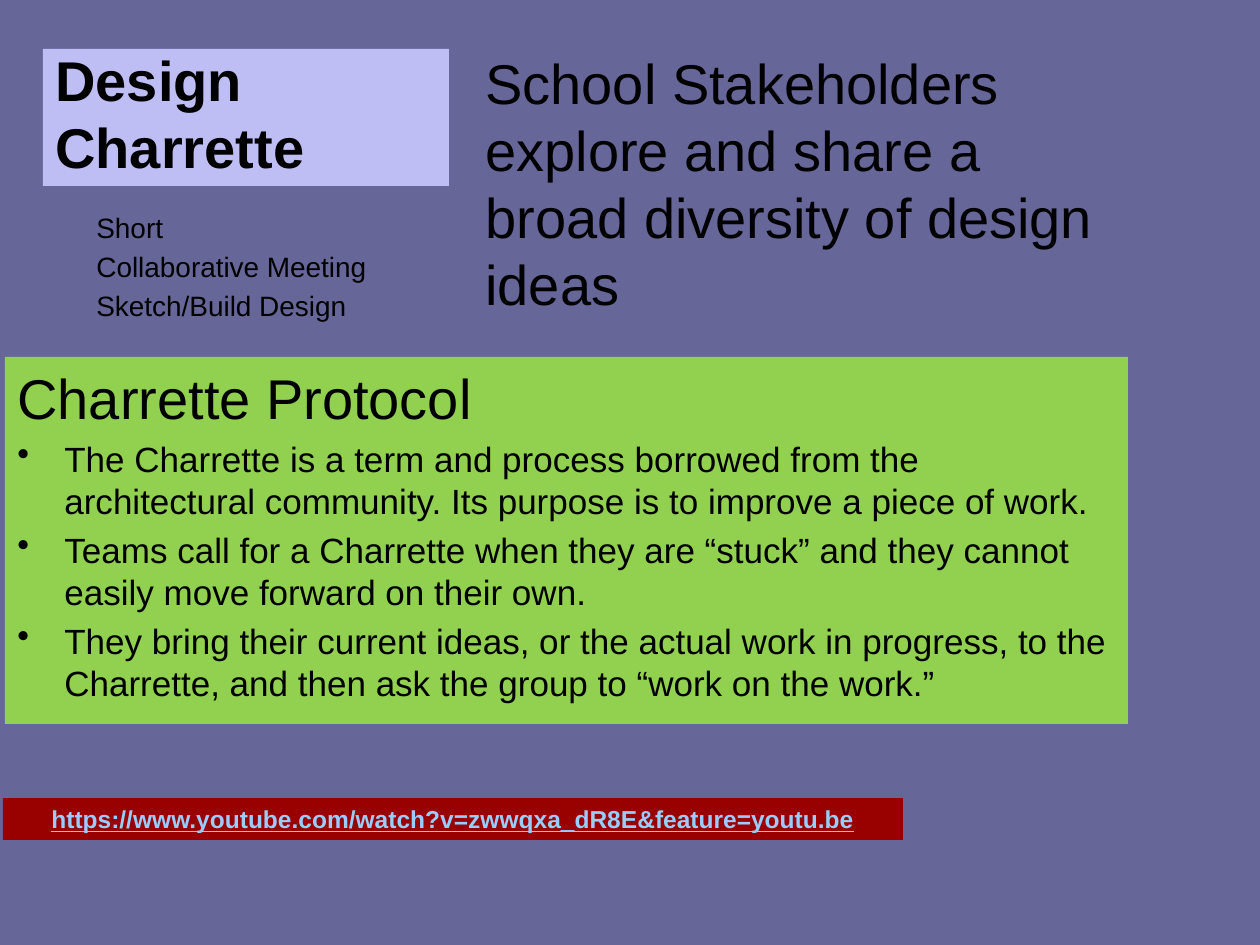
from pptx import Presentation
from pptx import util as u
from pptx.dml import color
from pptx.enum import shapes, text
from pptx.oxml import parse_xml
from pptx.oxml.ns import nsdecls

COLORS = {
    "background": "666699",
    "title": "BEBEF5",
    "protocol": "92D050",
    "link_bar": "990000",
    "link": "99CCFF",
    "ink": "000000",
}
FONT = "Arial"
SLIDE_WIDTH, SLIDE_HEIGHT = 1260, 945
SCALE = u.Inches(10) / SLIDE_WIDTH
BULLET_INDENT = 47


def px(length):
    return u.Emu(round(length * SCALE))


def rgb(name):
    return color.RGBColor.from_string(COLORS[name])


def write(para, words, size=16, ink="ink", bold=False, underline=False,
          align=text.PP_ALIGN.LEFT, bullet=False, gap=True):
    if bullet:
        props = para._p.get_or_add_pPr()
        props.set("marL", str(px(BULLET_INDENT)))
        props.set("indent", str(-px(BULLET_INDENT)))
        props.append(parse_xml(f'<a:buChar {nsdecls("a")} char="•"/>'))
    para.alignment = align
    if gap:
        para.space_before = u.Pt(size * 0.2)
    span = para.add_run()
    span.text = words
    span.font.name = FONT
    span.font.size = u.Pt(size)
    span.font.bold = bold
    span.font.underline = underline
    span.font.color.rgb = rgb(ink)


class SlideBuilder:
    def __init__(self, deck):
        self.page = deck.slides.add_slide(deck.slide_layouts[6])
        fill = self.page.background.fill
        fill.solid()
        fill.fore_color.rgb = rgb("background")

    def fill_text(self, box, lines, anchor):
        frame = box.text_frame
        frame.word_wrap = True
        frame.vertical_anchor = anchor
        for index, (words, style) in enumerate(lines):
            para = frame.add_paragraph() if index else frame.paragraphs[0]
            write(para, words, gap=index > 0, **style)

    def text_box(self, area, lines):
        box = self.page.shapes.add_textbox(*map(px, area))
        self.fill_text(box, lines, text.MSO_ANCHOR.TOP)

    def panel(self, area, fill, lines, anchor=text.MSO_ANCHOR.TOP):
        box = self.page.shapes.add_shape(
            shapes.MSO_SHAPE.RECTANGLE, *map(px, area))
        box.shadow.inherit = False
        box.fill.solid()
        box.fill.fore_color.rgb = rgb(fill)
        box.line.fill.background()
        self.fill_text(box, lines, anchor)


def main():
    deck = Presentation()
    deck.slide_width, deck.slide_height = px(SLIDE_WIDTH), px(SLIDE_HEIGHT)
    slide = SlideBuilder(deck)
    heading = {"size": 32}
    item = {"size": 20, "bullet": True}

    slide.panel((43, 49, 406, 137), "title",
                [("Design Charrette", {"size": 32, "bold": True})],
                text.MSO_ANCHOR.BOTTOM)
    slide.text_box((473, 42, 650, 284), [
        ("School Stakeholders explore and share a broad diversity of "
         "design ideas", heading)])
    slide.text_box((84, 204, 323, 158), [
        (words, {"size": 16})
        for words in ("Short", "Collaborative Meeting", "Sketch/Build Design")])
    slide.panel((5, 357, 1123, 367), "protocol", [
        ("Charrette Protocol", heading),
        ("The Charrette is a term and process borrowed from the architectural "
         "community. Its purpose is to improve a piece of work.", item),
        ("Teams call for a Charrette when they are “stuck” and they cannot "
         "easily move forward on their own.", item),
        ("They bring their current ideas, or the actual work in progress, to "
         "the Charrette, and then ask the group to “work on the work.”", item),
    ])
    slide.panel((3, 798, 900, 42), "link_bar", [
        ("https://www.youtube.com/watch?v=zwwqxa_dR8E&feature=youtu.be",
         {"size": 14, "ink": "link", "bold": True, "underline": True,
          "align": text.PP_ALIGN.CENTER})])
    deck.save("out.pptx")


if __name__ == "__main__":
    main()
